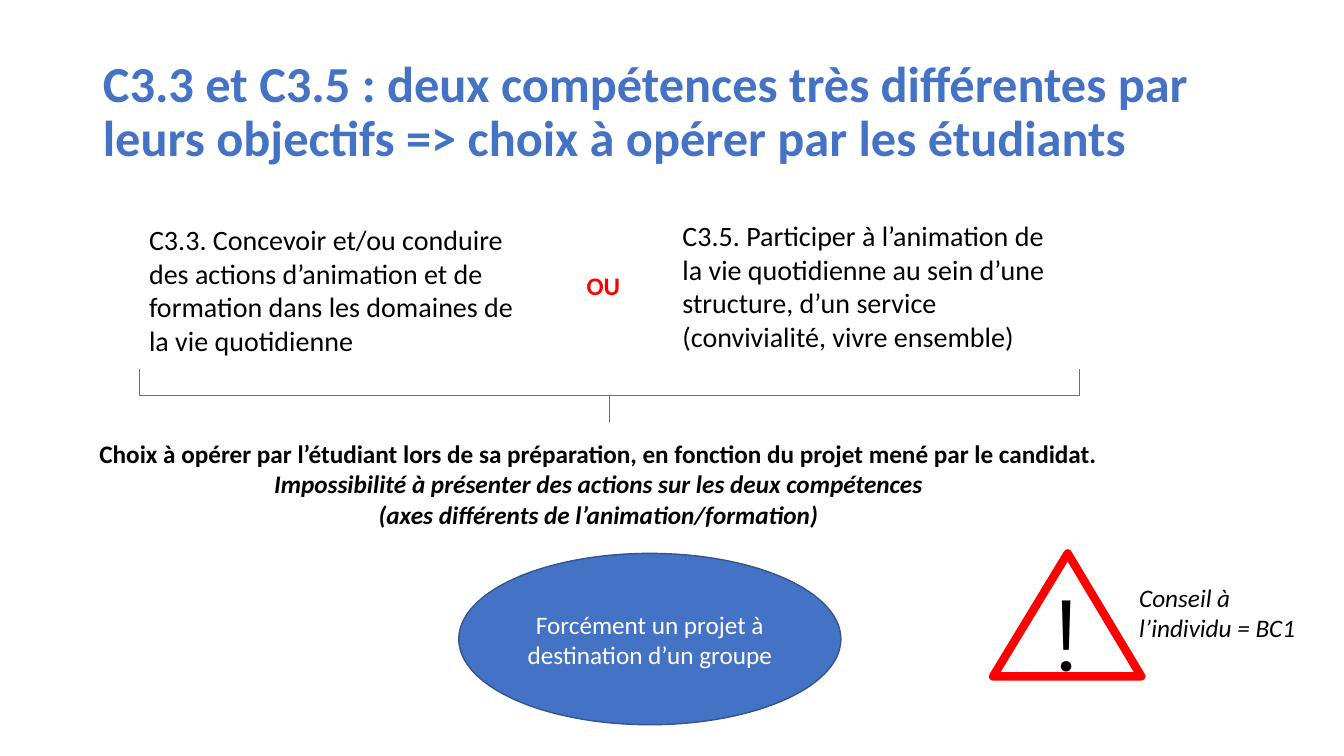
"""Build the slide that contrasts competences C3.3 and C3.5."""
from dataclasses import dataclass

from pptx import Presentation
from pptx.dml.color import RGBColor
from pptx.enum.shapes import MSO_SHAPE
from pptx.enum.text import MSO_ANCHOR, MSO_AUTO_SIZE, PP_ALIGN
from pptx.shapes.autoshape import Shape
from pptx.slide import Slide
from pptx.text.text import TextFrame
from pptx.util import Emu, Pt

PX = 9144
BLUE, DARK_BLUE, RED, BLACK, WHITE = "4472C4", "325491", "FF0000", "000000", "FFFFFF"
TITLE_ONLY = 5


@dataclass(frozen=True)
class Area:
    """A rectangle in px, at 100 px to the inch."""
    left: int
    top: int
    width: int
    height: int

    def emu(self) -> tuple[Emu, Emu, Emu, Emu]:
        """Return the rectangle in EMU."""
        return (Emu(self.left * PX), Emu(self.top * PX),
                Emu(self.width * PX), Emu(self.height * PX))


@dataclass(frozen=True)
class Line:
    """A paragraph with its character format."""
    text: str
    size: int = 18
    color: str = BLACK
    bold: bool = False
    italic: bool = False
    font: str = "Calibri"


@dataclass(frozen=True)
class Note:
    """A text box with its paragraphs."""
    area: Area
    lines: tuple[Line, ...]
    align: PP_ALIGN = PP_ALIGN.LEFT
    inset: bool = True


TITLE = Line("C3.3 et C3.5 : deux compétences très différentes par leurs objectifs "
             "=> choix à opérer par les étudiants", size=36, color=BLUE, bold=True)
GROUP = Line("Forcément un projet à destination d’un groupe", color=WHITE)
NOTES = (
    Note(Area(138, 216, 391, 145), (
        Line("C3.3. Concevoir et/ou conduire des actions d’animation et de "
             "formation dans les domaines de la vie quotidienne", size=20),)),
    Note(Area(667, 212, 391, 145), (
        Line("C3.5. Participer à l’animation de la vie quotidienne au sein d’une "
             "structure, d’un service (convivialité, vivre ensemble)", size=20),)),
    Note(Area(572, 263, 71, 40), (Line("OU", color=RED, bold=True),)),
    Note(Area(64, 430, 1059, 101), (
        Line("Choix à opérer par l’étudiant lors de sa préparation, en fonction du "
             "projet mené par le candidat.", bold=True),
        Line("Impossibilité à présenter des actions sur les deux compétences",
             bold=True, italic=True),
        Line("(axes différents de l’animation/formation)", bold=True, italic=True),
    ), align=PP_ALIGN.CENTER),
    Note(Area(1120, 573, 188, 71), (Line("Conseil à l’individu = BC1", italic=True),)),
    Note(Area(1045, 565, 51, 123), (Line("!", size=72, font="Montserrat"),), inset=False),
)


def rgb(color: str) -> RGBColor:
    """Turn a hex string into a colour."""
    return RGBColor.from_string(color)


def write(frame: TextFrame, *lines: Line, align: PP_ALIGN = PP_ALIGN.LEFT,
          anchor: MSO_ANCHOR = MSO_ANCHOR.TOP, spacing: float = 1.0) -> None:
    """Fill a text frame with formatted paragraphs."""
    frame.word_wrap = True
    frame.auto_size = MSO_AUTO_SIZE.NONE
    frame.vertical_anchor = anchor
    for index, line in enumerate(lines):
        para = frame.add_paragraph() if index else frame.paragraphs[0]
        para.alignment = align
        para.line_spacing = spacing
        span = para.add_run()
        span.text = line.text
        span.font.name = line.font
        span.font.size = Pt(line.size)
        span.font.bold = line.bold
        span.font.italic = line.italic
        span.font.color.rgb = rgb(line.color)


def paint(shape: Shape, line: str, width: float, fill: str | None = None) -> None:
    """Set the outline and the fill of a shape, without shadow."""
    shape.shadow.inherit = False
    shape.line.color.rgb = rgb(line)
    shape.line.width = Pt(width)
    if fill:
        shape.fill.solid()
        shape.fill.fore_color.rgb = rgb(fill)
    else:
        shape.fill.background()


def add_title(page: Slide) -> None:
    """Place and write the title."""
    title = page.shapes.title
    title.left, title.top, title.width, title.height = Area(92, 40, 1150, 145).emu()
    write(title.text_frame, TITLE, anchor=MSO_ANCHOR.MIDDLE, spacing=0.9)


def add_note(page: Slide, note: Note) -> None:
    """Add a text box."""
    frame = page.shapes.add_textbox(*note.area.emu()).text_frame
    if not note.inset:
        frame.margin_left = frame.margin_right = frame.margin_bottom = 0
        frame.margin_top = Emu(PX)
    write(frame, *note.lines, align=note.align)


def add_brace(page: Slide) -> None:
    """Add the square brace that joins both competences."""
    brace = page.shapes.add_shape(MSO_SHAPE.RIGHT_BRACE, *Area(578, -74, 53, 933).emu())
    brace.rotation = 90
    brace.adjustments[0], brace.adjustments[1] = 0, 0.5
    paint(brace, BLUE, 0.5)


def add_group(page: Slide) -> None:
    """Add the ellipse about the group project."""
    ellipse = page.shapes.add_shape(MSO_SHAPE.OVAL, *Area(455, 549, 379, 170).emu())
    paint(ellipse, DARK_BLUE, 1, BLUE)
    write(ellipse.text_frame, GROUP, align=PP_ALIGN.CENTER, anchor=MSO_ANCHOR.MIDDLE)


def add_warning(page: Slide) -> None:
    """Add the warning triangle."""
    outline = page.shapes.build_freeform(985, 671, scale=PX)
    outline.add_line_segments([(1059, 549), (1132, 671)], close=True)
    paint(outline.convert_to_shape(), RED, 6)


def main() -> None:
    """Build and save the deck."""
    deck = Presentation()
    deck.slide_width, deck.slide_height = Emu(1333 * PX), Emu(750 * PX)
    page = deck.slides.add_slide(deck.slide_layouts[TITLE_ONLY])
    add_title(page)
    add_brace(page)
    add_group(page)
    add_warning(page)
    for note in NOTES:
        add_note(page, note)
    deck.save("out.pptx")


if __name__ == "__main__":
    main()
